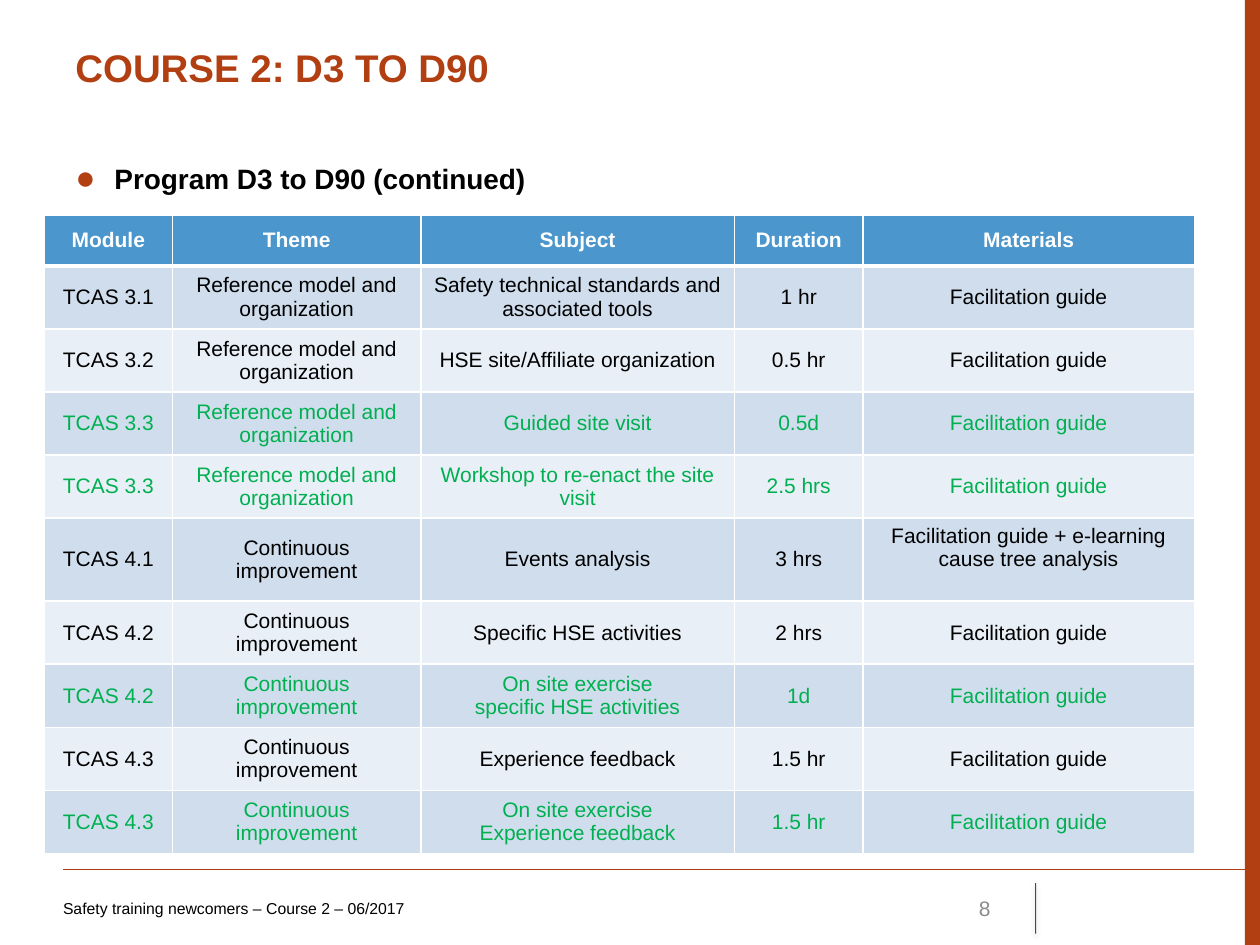
"""Build the course program slide with its module table."""
import dataclasses
import typing

import lxml.etree
import pptx
import pptx.dml.color
import pptx.enum.shapes
import pptx.enum.text
import pptx.oxml.ns
import pptx.util

Inches = pptx.util.Inches
Align = pptx.enum.text.PP_ALIGN
Anchor = pptx.enum.text.MSO_ANCHOR


@dataclasses.dataclass(frozen=True)
class Theme:
    font: str = "Arial"
    rust: str = "B23F12"
    black: str = "000000"
    white: str = "FFFFFF"
    gray: str = "8C8C8C"
    green: str = "00B050"
    head: str = "4A96CD"
    bands: tuple = ("D0DDED", "E9EFF6")
    title: int = 22
    lead: int = 16
    cell: int = 12
    foot: int = 9
    edge: int = 1
    rule: int = 3


class Label(typing.NamedTuple):
    text: str
    box: tuple
    size: int
    color: str
    bold: bool = False
    align: Align = Align.LEFT
    anchor: Anchor = Anchor.TOP
    inset: float = 0.1


class Line(typing.NamedTuple):
    ends: tuple
    color: str
    width: float
    faint: bool = False


class Row(typing.NamedTuple):
    cells: tuple
    site: bool = False
    height: float = 0.47
    last: Anchor = Anchor.MIDDLE


THEME = Theme()
MODEL = "Reference model and organization"
GROWTH = "Continuous improvement"
GUIDE = "Facilitation guide"
HEADS = ("Module", "Theme", "Subject", "Duration", "Materials")
WIDTHS = (1.02, 1.97, 2.49, 1.02, 2.63)
ROWS = (
    Row(("TCAS 3.1", MODEL, "Safety technical standards and associated tools", "1 hr", GUIDE)),
    Row(("TCAS 3.2", MODEL, "HSE site/Affiliate organization", "0.5 hr", GUIDE)),
    Row(("TCAS 3.3", MODEL, "Guided site visit", "0.5d", GUIDE), True),
    Row(("TCAS 3.3", MODEL, "Workshop to re-enact the site visit", "2.5 hrs", GUIDE), True),
    Row(("TCAS 4.1", GROWTH, "Events analysis", "3 hrs",
         GUIDE + " + e-learning cause tree analysis"), height=0.66, last=Anchor.TOP),
    Row(("TCAS 4.2", GROWTH, "Specific HSE activities", "2 hrs", GUIDE)),
    Row(("TCAS 4.2", GROWTH, "On site exercise\nspecific HSE activities", "1d", GUIDE), True),
    Row(("TCAS 4.3", GROWTH, "Experience feedback", "1.5 hr", GUIDE)),
    Row(("TCAS 4.3", GROWTH, "On site exercise\nExperience feedback", "1.5 hr", GUIDE), True),
)
TITLE = Label("COURSE 2: D3 TO D90", (0.5, 0.3, 8.99, 0.69), THEME.title, THEME.rust, True)
LEAD = Label("Program D3 to D90 (continued)", (0.5, 1.23, 8.99, 0.47),
             THEME.lead, THEME.black, True)
PAGE = Label("8", (7.17, 7.01, 0.79, 0.4), THEME.cell, THEME.gray,
             align=Align.RIGHT, anchor=Anchor.MIDDLE)
FOOT = Label("Safety training newcomers – Course 2 – 06/2017", (0.5, 7.01, 6.08, 0.4),
             THEME.foot, THEME.black, anchor=Anchor.MIDDLE, inset=0)
LINES = (
    Line((0.5, 6.9, 10, 6.9), THEME.rust, 0.75),
    Line((8.22, 7.01, 8.22, 7.41), THEME.black, 0.5, True),
)


def tint(code: str) -> pptx.dml.color.RGBColor:
    """Turn a hex code into a colour."""
    return pptx.dml.color.RGBColor.from_string(code)


def node(owner, tag: str, **attrs):
    """Add a drawing element to its owner."""
    values = {key: str(value) for key, value in attrs.items()}
    return lxml.etree.SubElement(owner, pptx.oxml.ns.qn("a:" + tag), values)


def style(frame, size: int, color: str, bold: bool, align: Align) -> None:
    """Format every run of a text frame."""
    for para in frame.paragraphs:
        para.alignment = align
        for run in para.runs:
            run.font.name = THEME.font
            run.font.size = pptx.util.Pt(size)
            run.font.bold = bold
            run.font.color.rgb = tint(color)


def write(slide, label: Label):
    """Draw one text box and return its frame."""
    frame = slide.shapes.add_textbox(*map(Inches, label.box)).text_frame
    frame.word_wrap = True
    frame.vertical_anchor = label.anchor
    frame.margin_left = Inches(label.inset)
    frame.text = label.text
    style(frame, label.size, label.color, label.bold, label.align)
    return frame


def dot(para) -> None:
    """Give a paragraph a round bullet and a hanging indent."""
    props = para._p.get_or_add_pPr()
    props.set("marL", str(Inches(0.31)))
    props.set("indent", str(-Inches(0.31)))
    node(node(props, "buClr"), "srgbClr", val=THEME.rust)
    node(props, "buSzPct", val=120000)
    node(props, "buFont", typeface=THEME.font)
    node(props, "buChar", char="●")


def stroke(slide, line: Line) -> None:
    """Draw one straight line, faint ones with a soft shadow."""
    kind = pptx.enum.shapes.MSO_CONNECTOR.STRAIGHT
    link = slide.shapes.add_connector(kind, *map(Inches, line.ends))
    link.line.color.rgb = tint(line.color)
    link.line.width = pptx.util.Pt(line.width)
    props = link._element.spPr
    effect = node(props, "effectLst")
    if line.faint:
        solid = props.find(".//" + pptx.oxml.ns.qn("a:srgbClr"))
        node(solid, "alpha", val=70000)
        shade = node(effect, "outerShdw", blurRad=pptx.util.Pt(3.1),
                     dist=pptx.util.Pt(1.6), dir=5400000, rotWithShape=0)
        node(node(shade, "srgbClr", val=THEME.black), "alpha", val=38000)


def fill(cell, text: str, back: str, color: str, bold: bool,
         anchor: Anchor, top: int, base: int) -> None:
    """Write one cell with its borders and fill."""
    props = cell._tc.get_or_add_tcPr()
    for side, width in zip("LRTB", (THEME.edge, THEME.edge, top, base)):
        edge = node(props, "ln" + side, w=pptx.util.Pt(width))
        node(node(edge, "solidFill"), "srgbClr", val=THEME.white)
    cell.fill.solid()
    cell.fill.fore_color.rgb = tint(back)
    cell.vertical_anchor = anchor
    cell.text_frame.text = text
    style(cell.text_frame, THEME.cell, color, bold, Align.CENTER)


def chart(slide) -> None:
    """Draw the module table."""
    rows = (Row(HEADS, height=0.4),) + ROWS
    sizes = (0.35, 1.71, sum(WIDTHS), sum(row.height for row in rows))
    table = slide.shapes.add_table(len(rows), len(HEADS), *map(Inches, sizes)).table
    table.horz_banding = False
    for col, width in zip(table.columns, WIDTHS):
        col.width = Inches(width)
    for i, row in enumerate(rows):
        table.rows[i].height = Inches(row.height)
        first = i == 0
        back = THEME.head if first else THEME.bands[(i - 1) % 2]
        color = THEME.white if first else THEME.green if row.site else THEME.black
        top = THEME.rule if i == 1 else THEME.edge
        base = THEME.rule if first else THEME.edge
        for j, text in enumerate(row.cells):
            anchor = row.last if j == len(HEADS) - 1 else Anchor.MIDDLE
            fill(table.cell(i, j), text, back, color, first, anchor, top, base)


def main() -> None:
    """Build and save the slide."""
    deck = pptx.Presentation()
    deck.slide_width, deck.slide_height = Inches(10), Inches(7.5)
    slide = deck.slides.add_slide(deck.slide_layouts[6])
    bar = slide.shapes.add_shape(pptx.enum.shapes.MSO_SHAPE.RECTANGLE,
                                 *map(Inches, (9.88, 0, 0.12, 7.5)))
    bar.shadow.inherit = False
    bar.fill.solid()
    bar.fill.fore_color.rgb = tint(THEME.rust)
    bar.line.fill.background()
    for line in LINES:
        stroke(slide, line)
    for label in (TITLE, PAGE, FOOT):
        write(slide, label)
    dot(write(slide, LEAD).paragraphs[0])
    chart(slide)
    deck.save("out.pptx")


if __name__ == "__main__":
    main()
